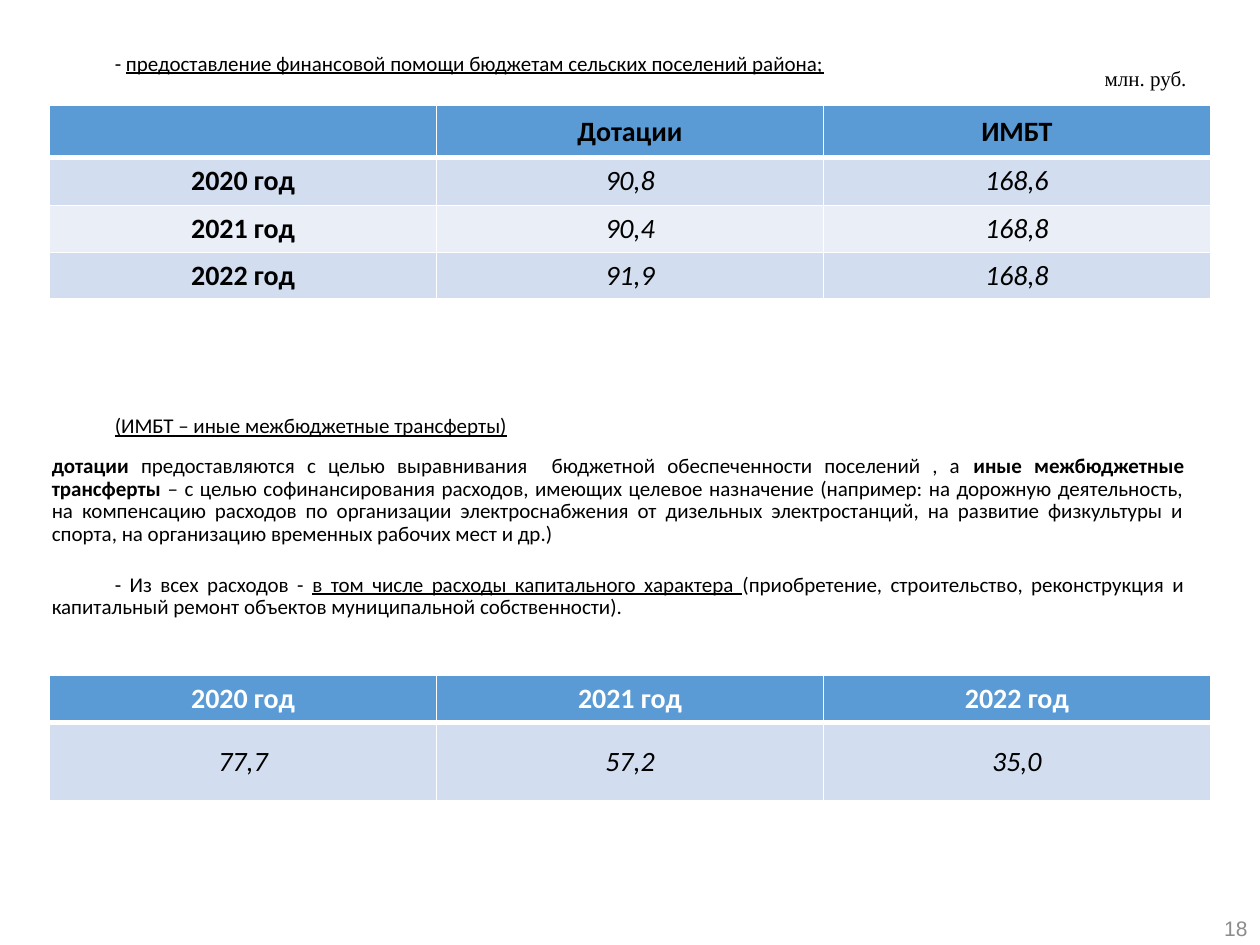
from dataclasses import dataclass

from lxml import etree
from pptx import Presentation
from pptx.dml.color import RGBColor
from pptx.enum.text import MSO_ANCHOR, MSO_AUTO_SIZE, PP_ALIGN
from pptx.oxml.ns import qn
from pptx.util import Cm, Pt

LEFT, MID, RIGHT, FULL = (PP_ALIGN.LEFT, PP_ALIGN.CENTER,
                          PP_ALIGN.RIGHT, PP_ALIGN.JUSTIFY)
CENTRE = MSO_ANCHOR.MIDDLE
FIXED = MSO_AUTO_SIZE.NONE


@dataclass(frozen=True)
class Theme:
    ink: str = "000000"
    white: str = "FFFFFF"
    grey: str = "8C8C8C"
    head: str = "5B9BD5"
    bands: tuple = ("D2DEEF", "EAEFF7")
    main: str = "Calibri"
    serif: str = "Times New Roman"
    sans: str = "Arial"
    small: int = 12
    large: int = 16


THEME = Theme()

# Each paragraph: alignment, first-line indent (cm), space before and after
# (points), then runs of text and style (u underlined, b bold).
NOTES = [
    (LEFT, 1.27, 0, 0, [
        ("- ", ""),
        ("предоставление финансовой помощи бюджетам сельских поселений "
         "района;", "u")]),
    (LEFT, 1.27, 194, 0, [("(ИМБТ – иные межбюджетные трансферты)", "u")]),
    (FULL, 0, 10, 6, [
        ("дотации ", "b"),
        ("предоставляются с целью выравнивания  бюджетной обеспеченности "
         "поселений , а ", ""),
        ("иные межбюджетные трансферты ", "b"),
        ("– с целью софинансирования расходов, имеющих целевое назначение "
         "(например: на дорожную деятельность, на компенсацию расходов по "
         "организации электроснабжения от дизельных электростанций, на "
         "развитие физкультуры и спорта, на организацию временных рабочих "
         "мест и др.)", "")]),
    (FULL, 1.27, 10, 0, [
        ("- Из всех расходов - ", ""),
        ("в том числе расходы капитального характера ", "u"),
        ("(приобретение, строительство, реконструкция и капитальный ремонт "
         "объектов муниципальной собственности).", "")]),
]

AID = [
    ("", "Дотации", "ИМБТ"),
    ("2020 год", "90,8", "168,6"),
    ("2021 год", "90,4", "168,8"),
    ("2022 год", "91,9", "168,8"),
]

CAPITAL = [
    ("2020 год", "2021 год", "2022 год"),
    ("77,7", "57,2", "35,0"),
]


def style(run, size, face, color, bold=False, slant=False, under=False):
    font = run.font
    font.size, font.name = Pt(size), face
    font.color.rgb = RGBColor.from_string(color)
    font.bold, font.italic, font.underline = bold, slant, under


def place(shape, box):
    shape.left, shape.top, shape.width, shape.height = map(Cm, box)


def add_notes(slide, box):
    body = slide.placeholders[1]
    place(body, box)
    frame = body.text_frame
    frame.auto_size = FIXED
    for i, (align, indent, before, after, runs) in enumerate(NOTES):
        para = frame.add_paragraph() if i else frame.paragraphs[0]
        para.alignment = align
        para.line_spacing = 0.9
        para.space_before, para.space_after = Pt(before), Pt(after)
        props = para._p.get_or_add_pPr()
        props.set("marL", "0")
        props.set("indent", str(Cm(indent)))
        etree.SubElement(props, qn("a:buNone"))
        for text, marks in runs:
            run = para.add_run()
            run.text = text
            style(run, THEME.small, THEME.main, THEME.ink,
                  bold="b" in marks, under="u" in marks)


def add_edges(cell, base):
    """Draw white cell borders; base is the bottom width in points."""
    props = cell._tc.get_or_add_tcPr()
    for side, width in (("L", 1), ("R", 1), ("T", 1), ("B", base)):
        line = etree.SubElement(props, qn("a:ln" + side), w=str(Pt(width)))
        fill = etree.SubElement(line, qn("a:solidFill"))
        etree.SubElement(fill, qn("a:srgbClr"), val=THEME.white)


def add_grid(slide, box, data, heights, head_ink, named):
    """Add a banded table; named means the first column holds row names."""
    table = slide.shapes.add_table(len(data), len(data[0]),
                                   *map(Cm, box)).table
    for r, row in enumerate(data):
        table.rows[r].height = Cm(heights[r])
        head = r == 0
        fill = THEME.head if head else THEME.bands[(r - 1) % 2]
        for c, text in enumerate(row):
            cell = table.cell(r, c)
            add_edges(cell, 3 if head else 1)
            cell.fill.solid()
            cell.fill.fore_color.rgb = RGBColor.from_string(fill)
            cell.vertical_anchor = CENTRE
            if not text:
                continue
            para = cell.text_frame.paragraphs[0]
            para.text = text
            para.alignment = MID
            label = head or (named and c == 0)
            style(para.runs[0], THEME.large, THEME.main,
                  head_ink if head else THEME.ink,
                  bold=label, slant=not label)


def add_label(slide, box, text, face, color, align, anchor=None):
    frame = slide.shapes.add_textbox(*map(Cm, box)).text_frame
    frame.word_wrap = True
    frame.vertical_anchor = anchor
    para = frame.paragraphs[0]
    para.text = text
    para.alignment = align
    style(para.runs[0], THEME.small, face, color)


def main():
    deck = Presentation()
    deck.slide_width, deck.slide_height = Cm(25.4), Cm(19.05)
    slide = deck.slides.add_slide(deck.slide_layouts[1])
    title = slide.shapes.title._element
    title.getparent().remove(title)

    add_notes(slide, (0.79, 0.94, 23.34, 17))
    add_grid(slide, (1, 2.13, 23.4, 3.89), AID, (1.04, 0.97, 0.94, 0.94),
             THEME.ink, named=True)
    add_grid(slide, (1, 13.62, 23.4, 2.49), CAPITAL, (0.92, 1.57),
             THEME.white, named=False)
    add_label(slide, (19.48, 18.06, 5.92, 1.32), "18", THEME.sans,
              THEME.grey, RIGHT, CENTRE)
    add_label(slide, (22.02, 1.19, 2.39, 0.76), "млн. руб.", THEME.serif,
              THEME.ink, LEFT)
    deck.save("out.pptx")


if __name__ == "__main__":
    main()
